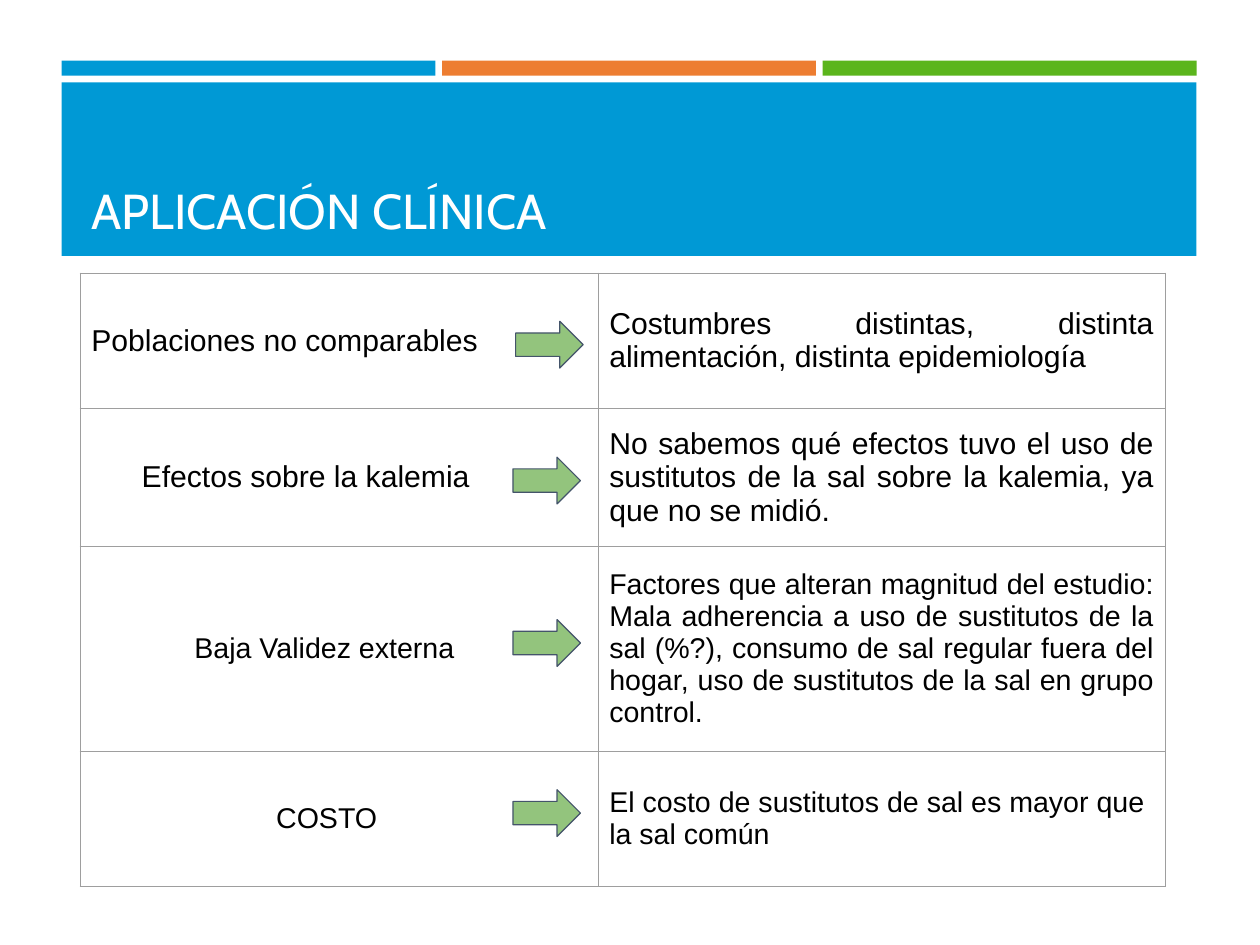
import pptx
import pptx.util
import pptx.dml.color
import pptx.enum.shapes
import pptx.enum.text
import pptx.oxml
import pptx.oxml.ns

Cm = pptx.util.Cm
Pt = pptx.util.Pt
ALIGN = pptx.enum.text.PP_ALIGN
ANCHOR = pptx.enum.text.MSO_ANCHOR
SHAPES = pptx.enum.shapes.MSO_SHAPE

heading = "APLICACIÓN CLÍNICA"
issues = [
    {"issue": "Poblaciones no comparables",
     "detail": "Costumbres distintas, distinta alimentación, distinta epidemiología",
     "align": (ALIGN.LEFT, ALIGN.JUSTIFY), "sizes": (19, 19),
     "indent": 0, "inset": 0, "height": 3.0, "arrow": (11.46, 7.14)},
    {"issue": "Efectos sobre la kalemia",
     "detail": "No sabemos qué efectos tuvo el uso de sustitutos de la sal sobre la kalemia, "
               "ya que no se midió.",
     "align": (ALIGN.LEFT, ALIGN.JUSTIFY), "sizes": (19, 19),
     "indent": 1.12, "inset": 0, "height": 3.07, "arrow": (11.4, 10.16)},
    {"issue": "Baja Validez externa",
     "detail": "Factores que alteran magnitud del estudio: Mala adherencia a uso de "
               "sustitutos de la sal (%?), consumo de sal regular fuera del hogar, "
               "uso de sustitutos de la sal en grupo control.",
     "align": (ALIGN.LEFT, ALIGN.JUSTIFY), "sizes": (18, 18),
     "indent": 2.29, "inset": 0, "height": 4.55, "arrow": (11.4, 13.77)},
    {"issue": "COSTO",
     "detail": "El costo de sustitutos de sal es mayor que la sal común",
     "align": (ALIGN.CENTER, ALIGN.LEFT), "sizes": (18, 18),
     "indent": 0, "inset": 0.55, "height": 3.0, "arrow": (11.4, 17.55)},
]

theme = {
    "stripes": ("0099D5", "ED7D31", "5BB51C"),
    "banner": "0099D5",
    "heading": {"name": "Cabin", "size": 30.9, "color": "FFFFFF"},
    "body": {"name": "Arial", "color": "000000"},
    "arrow": "93C47D",
    "arrow_line": "44546A",
    "border": "9E9E9E",
    "line_width": 0.75,
}

band_left, band_width, stripe_gap = 1.37, 25.22, 0.15
table_left, table_top = 1.78, 6.07
column_widths = (11.51, 12.6)
cell_margin = 0.25


def rgb(value):
    return pptx.dml.color.RGBColor.from_string(value)


def apply(target, values):
    for name, value in values.items():
        setattr(target, name, value)


def write(frame, text, align, name, size, color):
    paragraph = frame.paragraphs[0]
    paragraph.alignment = align
    run = paragraph.add_run()
    run.text = text
    apply(run.font, {"name": name, "size": Pt(size)})
    run.font.color.rgb = rgb(color)


def draw(slide, kind, box, fill, line=None):
    shape = slide.shapes.add_shape(kind, *map(Cm, box))
    shape.shadow.inherit = False
    shape.fill.solid()
    shape.fill.fore_color.rgb = rgb(fill)
    if line:
        shape.line.color.rgb = rgb(line)
        shape.line.width = Pt(theme["line_width"])
    else:
        shape.line.fill.background()


def outline(cell):
    cell.fill.background()
    properties = cell._tc.get_or_add_tcPr()
    for position, side in enumerate(("lnL", "lnR", "lnT", "lnB")):
        border = pptx.oxml.parse_xml(
            f'<a:{side} {pptx.oxml.ns.nsdecls("a")} w="{Pt(theme["line_width"])}">'
            f'<a:solidFill><a:srgbClr val="{theme["border"]}"/></a:solidFill></a:{side}>')
        properties.insert(position, border)


def add_header(slide):
    stripe_width = (band_width - 2 * stripe_gap) / 3
    for index, color in enumerate(theme["stripes"]):
        left = band_left + index * (stripe_width + stripe_gap)
        draw(slide, SHAPES.RECTANGLE, (left, 1.35, stripe_width, 0.33), color)
    draw(slide, SHAPES.RECTANGLE, (band_left, 1.83, band_width, 3.86), theme["banner"])
    title = slide.shapes.add_textbox(Cm(1.78), Cm(2.11), Cm(24.46), Cm(3.33)).text_frame
    apply(title, {"word_wrap": True, "vertical_anchor": ANCHOR.BOTTOM})
    write(title, heading, ALIGN.LEFT, **theme["heading"])


def add_issues(slide):
    table = slide.shapes.add_table(
        len(issues), len(column_widths), Cm(table_left), Cm(table_top),
        Cm(sum(column_widths)), Cm(sum(row["height"] for row in issues))).table
    apply(table, {"first_row": False, "horz_banding": False})
    for column, width in zip(table.columns, column_widths):
        column.width = Cm(width)
    for row, content in zip(table.rows, issues):
        row.height = Cm(content["height"])
        for index, part in enumerate(("issue", "detail")):
            cell = row.cells[index]
            apply(cell, {"vertical_anchor": ANCHOR.MIDDLE,
                         "margin_left": Cm(cell_margin),
                         "margin_right": Cm(cell_margin),
                         "margin_top": Cm(cell_margin),
                         "margin_bottom": Cm(cell_margin)})
            write(cell.text_frame, content[part], content["align"][index],
                  size=content["sizes"][index], **theme["body"])
            outline(cell)
        apply(row.cells[0], {"margin_left": Cm(cell_margin + content["indent"]),
                             "margin_right": Cm(cell_margin + content["inset"])})
    for content in issues:
        draw(slide, SHAPES.RIGHT_ARROW, (*content["arrow"], 1.5, 1.04),
             theme["arrow"], theme["arrow_line"])


def main():
    deck = pptx.Presentation()
    apply(deck, {"slide_width": Cm(28), "slide_height": Cm(21)})
    slide = deck.slides.add_slide(deck.slide_layouts[6])
    add_header(slide)
    add_issues(slide)
    deck.save("out.pptx")


if __name__ == "__main__":
    main()
